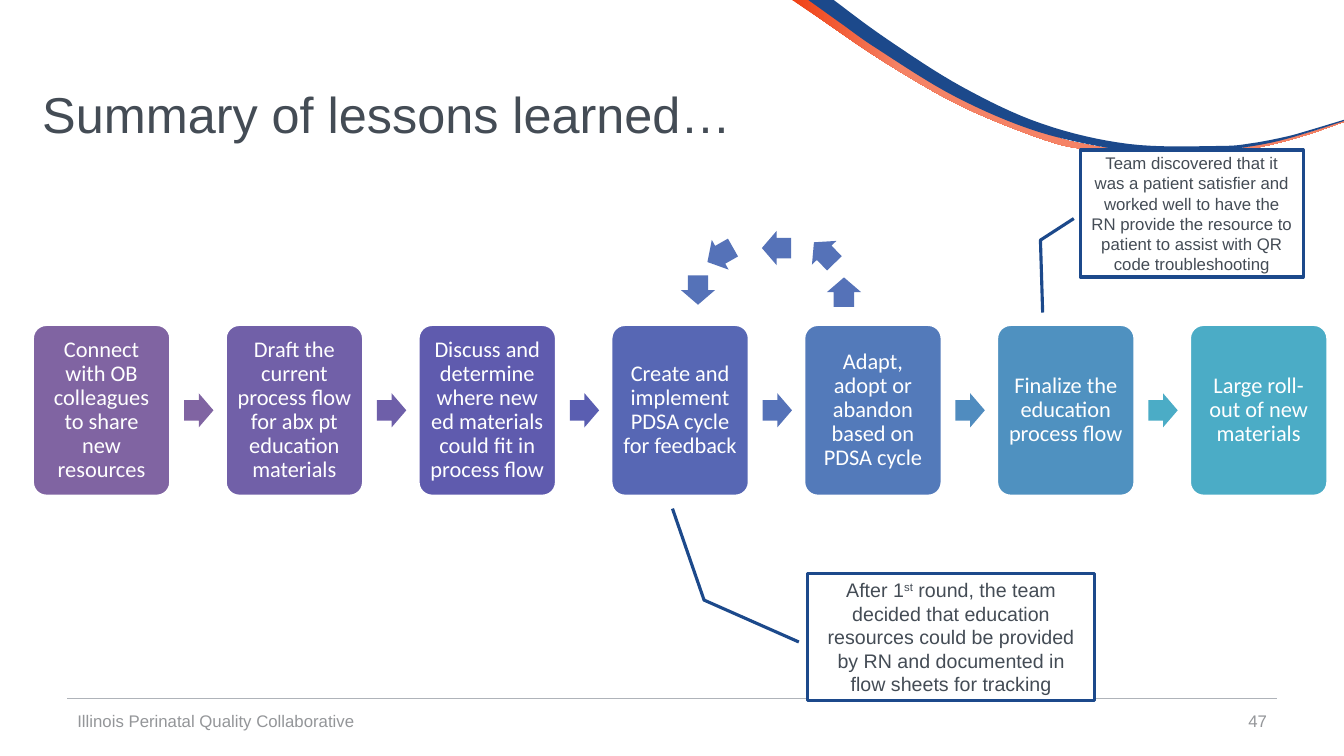
from lxml.etree import SubElement
from pptx import Presentation
from pptx.dml.color import RGBColor
from pptx.enum.shapes import MSO_CONNECTOR, MSO_SHAPE
from pptx.enum.text import MSO_ANCHOR, MSO_AUTO_SIZE, PP_ALIGN
from pptx.oxml.ns import qn
from pptx.util import Cm, Pt

WHITE = RGBColor(0xFF, 0xFF, 0xFF)
NAVY = RGBColor(0x1C, 0x49, 0x8B)
ORANGE = RGBColor(0xF0, 0x41, 0x15)
SALMON = RGBColor(0xF5, 0x83, 0x66)
SLATE = RGBColor(0x44, 0x4C, 0x55)
GREY = RGBColor(0x94, 0x96, 0x99)
RULE = RGBColor(0xAF, 0xB3, 0xB9)
LOOP_BLUE = RGBColor(0x55, 0x72, 0xB8)

STEPS = [
    ("Connect with OB colleagues to share new resources", "8064A2", "8064A2"),
    ("Draft the current process flow for abx pt education materials", "7160A8", "6E5FA9"),
    ("Discuss and determine where new ed materials could fit in process flow", "5F5BAE", "5A5EB1"),
    ("Create and implement PDSA cycle for feedback", "5767B4", "5572B8"),
    ("Adapt, adopt or abandon based on PDSA cycle", "537ABA", "508CBF"),
    ("Finalize the education process flow", "4F91C0", "4BACC6"),
    ("Large roll-out of new materials", "4BACC6", None),
]
STEP_LEFT, STEP_TOP, STEP_PITCH = 0.82, 8.18, 4.86
STEP_WIDTH, STEP_HEIGHT = 3.48, 4.32
ARROW_WIDTH, ARROW_HEIGHT = 0.74, 0.86

LOOP_ARROWS = [
    (20.9, 6.93, 270),
    (20.4, 5.94, 225.8),
    (19.2, 5.82, 180),
    (17.78, 5.99, 150.4),
    (17.22, 6.88, 90),
]

ORANGE_UPPER = [
    (20.45, 0), (22.4, 1.37), (24.33, 2.51), (26.39, 3.38), (27.46, 3.66), (28.58, 3.81),
    (29.67, 3.86), (30.51, 3.84), (31.34, 3.73), (32.18, 3.56), (32.99, 3.35), (33.87, 3.05),
]
ORANGE_LOWER = [
    (33.87, 3.07), (32.99, 3.38), (32.18, 3.61), (31.37, 3.78), (30.53, 3.91), (29.69, 3.96),
    (28.55, 3.94), (27.43, 3.78), (26.34, 3.53), (24.26, 2.69), (22.3, 1.57), (20.42, 0.3),
    (19.96, 0),
]
NAVY_UPPER = [
    (21.01, 0), (22.33, 0.97), (24.23, 2.18), (26.26, 3.12), (28.45, 3.63), (30.71, 3.68),
    (31.55, 3.61), (32.39, 3.45), (32.94, 3.3), (33.87, 3.02),
]
NAVY_LOWER = [
    (33.87, 3.05), (32.94, 3.35), (32.11, 3.58), (31.27, 3.73), (30.43, 3.84), (29.57, 3.86),
    (28.42, 3.81), (26.19, 3.33), (24.08, 2.44), (22.12, 1.24), (21.18, 0.58), (20.37, 0),
]


def add_run(p, text, size=12, font="Arial", color=SLATE, superscript=False):
    r = p.add_run()
    r.text = text
    r.font.size = Pt(size)
    r.font.name = font
    r.font.color.rgb = color
    if superscript:
        r._r.get_or_add_rPr().set("baseline", "30000")


def set_frame(tf, align=PP_ALIGN.LEFT, spacing=None, inset=None):
    tf.word_wrap = True
    tf.auto_size = MSO_AUTO_SIZE.NONE
    tf.vertical_anchor = MSO_ANCHOR.MIDDLE
    if inset is not None:
        tf.margin_left = tf.margin_right = tf.margin_top = tf.margin_bottom = Cm(inset)
    p = tf.paragraphs[0]
    p.alignment = align
    if spacing:
        p.line_spacing = spacing
    return p


def add_solid(slide, kind, left, top, width, height, fill, adjustments):
    sp = slide.shapes.add_shape(kind, Cm(left), Cm(top), Cm(width), Cm(height))
    sp.shadow.inherit = False
    sp.fill.solid()
    sp.fill.fore_color.rgb = fill
    sp.line.fill.background()
    for i, value in enumerate(adjustments):
        sp.adjustments[i] = value
    return sp


def set_line(sp, color, width):
    sp.line.color.rgb = color
    sp.line.width = Pt(width)


def add_arrow(slide, left, top, fill, rotation=0):
    sp = add_solid(slide, MSO_SHAPE.RIGHT_ARROW, left, top, ARROW_WIDTH, ARROW_HEIGHT,
                   fill, (0.6, 0.5))
    sp.rotation = rotation


def add_step(slide, left, text, fill):
    sp = add_solid(slide, MSO_SHAPE.ROUNDED_RECTANGLE, left, STEP_TOP, STEP_WIDTH, STEP_HEIGHT,
                   fill, (0.1,))
    set_line(sp, WHITE, 2)
    p = set_frame(sp.text_frame, PP_ALIGN.CENTER, 0.9, 0.18)
    add_run(p, text, size=16, font="Calibri", color=WHITE)


def add_callout(slide, left, top, width, height, leader):
    sp = add_solid(slide, MSO_SHAPE.LINE_CALLOUT_2, left, top, width, height, WHITE, leader)
    set_line(sp, NAVY, 2.25)
    return set_frame(sp.text_frame, PP_ALIGN.CENTER)


def add_label(slide, left, width, text, align):
    sp = slide.shapes.add_textbox(Cm(left), Cm(17.65), Cm(width), Cm(1.02))
    add_run(set_frame(sp.text_frame, align), text, color=GREY)


def smooth(points, steps=8):
    padded = [points[0], *points, points[-1]]
    curve = [points[0]]
    for a, b, c, d in zip(padded, padded[1:], padded[2:], padded[3:]):
        for k in range(1, steps + 1):
            t = k / steps
            curve.append(tuple(
                (2 * q + (r - p) * t + (2 * p - 5 * q + 4 * r - s) * t ** 2
                 + (3 * q - p - 3 * r + s) * t ** 3) / 2
                for p, q, r, s in zip(a, b, c, d)))
    return curve


def add_ribbon(slide, upper, lower):
    outline = [(Cm(x), Cm(y)) for x, y in smooth(upper) + smooth(lower)]
    builder = slide.shapes.build_freeform(*outline[0])
    builder.add_line_segments(outline[1:], close=True)
    sp = builder.convert_to_shape()
    sp.shadow.inherit = False
    sp.line.fill.background()
    return sp.fill


def add_footer_rule(slide):
    line = slide.shapes.add_connector(MSO_CONNECTOR.STRAIGHT, Cm(1.7), Cm(17.6), Cm(32.18), Cm(17.6))
    set_line(line, RULE, 0.5)
    SubElement(line._element.spPr, qn("a:effectLst"))


def set_title(slide, text):
    title = slide.shapes.title
    title.left, title.top, title.width, title.height = Cm(0.81), Cm(1.12), Cm(30.48), Cm(3.68)
    add_run(set_frame(title.text_frame, spacing=0.9), text, size=36)


def main():
    prs = Presentation()
    prs.slide_width, prs.slide_height = Cm(33.87), Cm(19.05)
    slide = prs.slides.add_slide(prs.slide_layouts[5])
    set_title(slide, "Summary of lessons learned…")

    add_footer_rule(slide)
    fill = add_ribbon(slide, ORANGE_UPPER, ORANGE_LOWER)
    fill.gradient()
    fill.gradient_angle = 0
    for stop, color, position in zip(fill.gradient_stops, (ORANGE, SALMON), (0, 0.2)):
        stop.color.rgb = color
        stop.position = position
    fill = add_ribbon(slide, NAVY_UPPER, NAVY_LOWER)
    fill.solid()
    fill.fore_color.rgb = NAVY

    add_label(slide, 24.56, 7.62, "47", PP_ALIGN.RIGHT)
    add_label(slide, 1.7, 11.43, "Illinois Perinatal Quality Collaborative", PP_ALIGN.LEFT)

    for i, (text, box_color, arrow_color) in enumerate(STEPS):
        left = STEP_LEFT + i * STEP_PITCH
        add_step(slide, left, text, RGBColor.from_string(box_color))
        if arrow_color:
            add_arrow(slide, left + 3.82, STEP_TOP + (STEP_HEIGHT - ARROW_HEIGHT) / 2,
                      RGBColor.from_string(arrow_color))

    for left, top, rotation in LOOP_ARROWS:
        add_arrow(slide, left, top, LOOP_BLUE, rotation)

    p = add_callout(slide, 20.35, 14.45, 7.24, 3.2, (0.54, -0.03, 0.21, -0.36, -0.51, -0.47))
    add_run(p, "After 1", size=14)
    add_run(p, "st", size=14, superscript=True)
    add_run(p, " round, the team decided that education resources could be provided by RN "
               "and documented in flow sheets for tracking", size=14)

    p = add_callout(slide, 27.23, 3.78, 5.61, 3.2, (0.54, -0.03, 0.71, -0.18, 1.28, -0.17))
    add_run(p, "Team discovered that it was a patient satisfier and worked well to have the RN "
               "provide the resource to patient to assist with QR code troubleshooting")

    prs.save("out.pptx")


if __name__ == "__main__":
    main()
